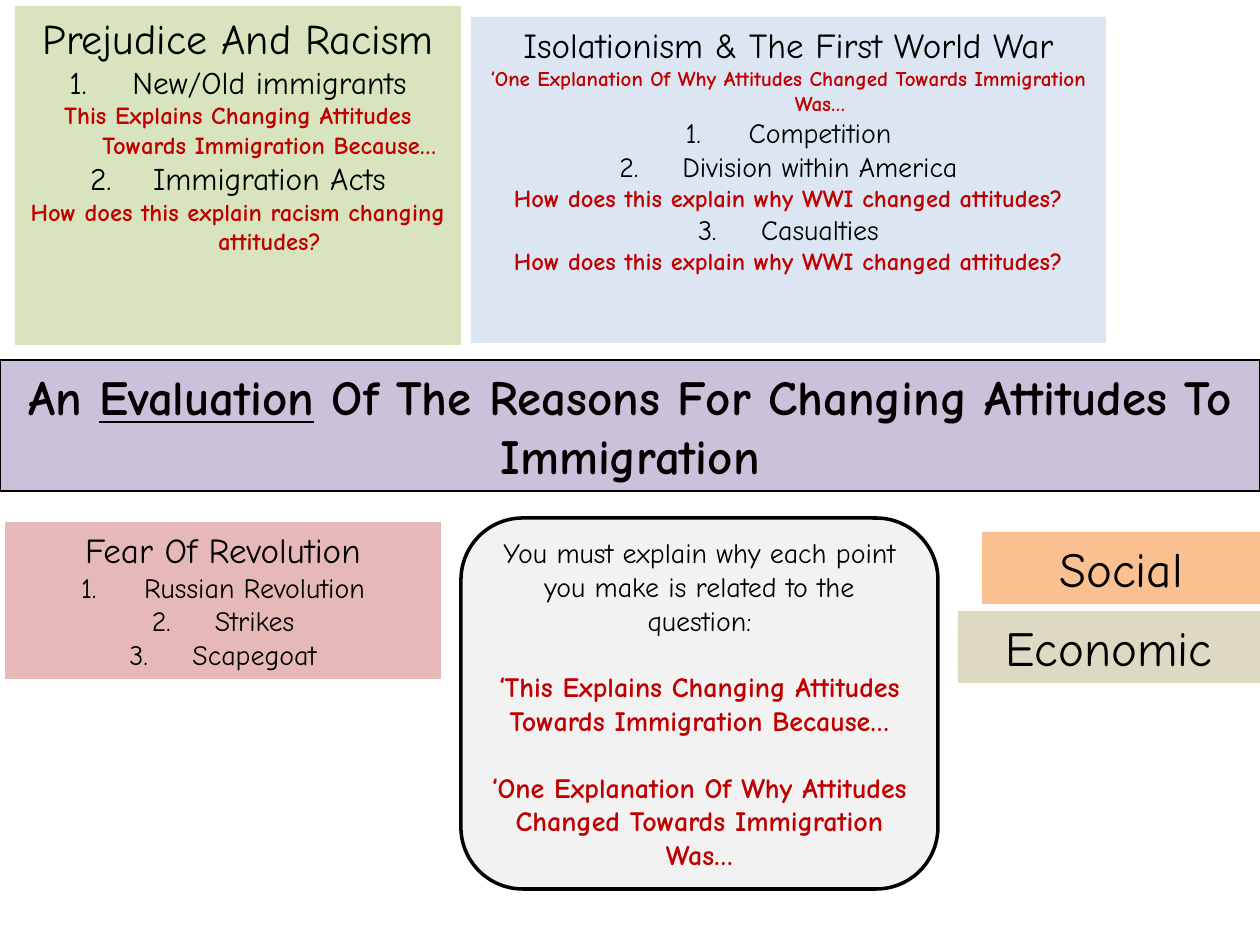
from dataclasses import dataclass

from lxml.etree import SubElement
from pptx import Presentation
from pptx.dml.color import RGBColor
from pptx.enum.shapes import MSO_SHAPE as Shape
from pptx.enum.text import MSO_ANCHOR as Anchor, MSO_AUTO_SIZE as AutoSize, PP_ALIGN as Align
from pptx.oxml.ns import qn
from pptx.util import Emu, Inches, Pt

PX = 914400 / 126
FONT = "Comic Neue"
COLORS = {
    "text": "000000",
    "prompt": "C00000",
    "title": "CCC1DA",
    "prejudice": "D7E4BD",
    "isolationism": "DCE6F2",
    "economic": "DDD9C3",
    "social": "FAC090",
    "revolution": "E6B9B8",
    "advice": "F2F2F2",
}


@dataclass(frozen=True)
class Line:
    text: str
    size: int
    color: str = "text"
    bold: bool = False
    indented: bool = False
    number: int = 0  # first number of a list, 0 for none
    underlined: str = ""
    space_before: int = 0


@dataclass(frozen=True)
class Box:
    fill: str
    left: int
    top: int
    width: int
    height: int
    lines: tuple[Line, ...]
    outline: float = 0
    kind: Shape = Shape.RECTANGLE
    anchor: Anchor = Anchor.TOP


def point(text: str, size: int, number: int = 1) -> Line:
    return Line(text, size, indented=True, number=number)


def prompt(text: str, size: int = 14) -> Line:
    return Line(text, size, "prompt", bold=True, indented=True)


def advice(text: str) -> Line:
    return Line(text, 16, "prompt", bold=True, space_before=19)


EXPLAINS = "This Explains Changing Attitudes Towards Immigration Because…"
ONE_REASON = "‘One Explanation Of Why Attitudes Changed Towards Immigration Was…"
WAR_QUESTION = prompt("How does this explain why WWI changed attitudes?")

BOXES = (
    Box("title", 0, 360, 1260, 131, (
        Line("An Evaluation Of The Reasons For Changing Attitudes To Immigration",
             28, bold=True, underlined="Evaluation"),
    ), outline=0.75, anchor=Anchor.MIDDLE),
    Box("prejudice", 15, 6, 446, 339, (
        Line("Prejudice And Racism", 24),
        point("New/Old immigrants", 18),
        prompt(EXPLAINS),
        point("Immigration Acts", 18, number=2),
        prompt("How does this explain racism changing attitudes?"),
    )),
    Box("isolationism", 471, 17, 635, 326, (
        Line("Isolationism & The First World War", 20),
        prompt(ONE_REASON, 12),
        point("Competition", 16),
        point("Division within America", 16),
        WAR_QUESTION,
        point("Casualties", 16, number=3),
        WAR_QUESTION,
    )),
    Box("economic", 958, 611, 302, 72, (Line("Economic", 28),)),
    Box("social", 982, 532, 278, 72, (Line("Social", 28),)),
    Box("revolution", 5, 522, 436, 157, (
        Line("Fear Of Revolution", 20),
        point("Russian Revolution", 16),
        point("Strikes", 16),
        point("Scapegoat", 16),
    )),
    Box("advice", 461, 518, 477, 371, (
        Line("You must explain why each point you make is related to the question:", 16),
        advice("‘" + EXPLAINS),
        advice(ONE_REASON),
    ), outline=2, kind=Shape.ROUNDED_RECTANGLE, anchor=Anchor.MIDDLE),
)


def px(length: int) -> Emu:
    return Emu(round(length * PX))


def rgb(name: str) -> RGBColor:
    return RGBColor.from_string(COLORS[name])


def write_line(paragraph, line: Line) -> None:
    paragraph.alignment = Align.CENTER

    # Hanging indent and numbering
    if line.indented:
        properties = paragraph._p.get_or_add_pPr()
        properties.set("marL", str(Inches(0.5)))
        properties.set("indent", str(-Inches(0.5)))
        if line.number:
            numbering = SubElement(properties, qn("a:buAutoNum"), type="arabicPeriod")
            if line.number > 1:
                numbering.set("startAt", str(line.number))
    if line.space_before:
        paragraph.space_before = Pt(line.space_before)

    font = paragraph.font
    font.name = FONT
    font.size = Pt(line.size)
    font.bold = line.bold
    font.color.rgb = rgb(line.color)

    # Text, with one underlined word where asked for
    parts = line.text.partition(line.underlined) if line.underlined else (line.text,)
    for part in parts:
        run = paragraph.add_run()
        run.text = part
        if part == line.underlined:
            run.font.underline = True


def draw_box(slide, box: Box) -> None:
    shape = slide.shapes.add_shape(
        box.kind, px(box.left), px(box.top), px(box.width), px(box.height))
    shape.shadow.inherit = False
    shape.fill.solid()
    shape.fill.fore_color.rgb = rgb(box.fill)
    if box.outline:
        shape.line.color.rgb = rgb("text")
        shape.line.width = Pt(box.outline)
    else:
        shape.line.fill.background()

    frame = shape.text_frame
    frame.word_wrap = True
    frame.vertical_anchor = box.anchor
    if box.kind == Shape.RECTANGLE:
        frame.auto_size = AutoSize.SHAPE_TO_FIT_TEXT
    for index, line in enumerate(box.lines):
        paragraph = frame.add_paragraph() if index else frame.paragraphs[0]
        write_line(paragraph, line)


def main() -> None:
    presentation = Presentation()
    presentation.slide_width = Inches(10)
    presentation.slide_height = Inches(7.5)
    slide = presentation.slides.add_slide(presentation.slide_layouts[6])
    for box in BOXES:
        draw_box(slide, box)
    presentation.save("out.pptx")


if __name__ == "__main__":
    main()
